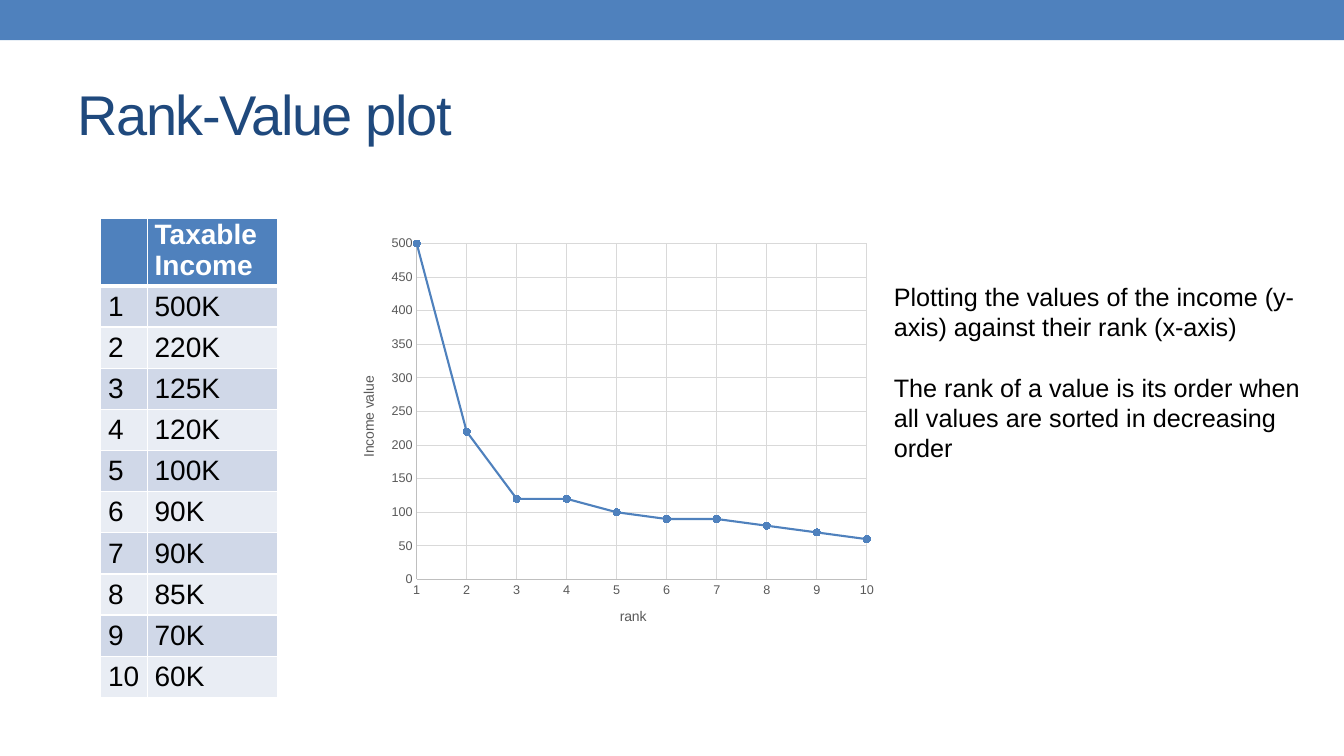
"""Build the rank-value plot slide: income table, scatter chart and explanation."""
import pptx
import pptx.chart.data
import pptx.dml.color
import pptx.enum.chart
import pptx.enum.shapes
import pptx.enum.text
import pptx.oxml
import pptx.oxml.ns
import pptx.util
from lxml import etree

Pt = pptx.util.Pt
qn = pptx.oxml.ns.qn
COLORS = {
    "accent": "4F81BD", "title": "1F497D", "text": "000000", "white": "FFFFFF",
    "band_dark": "D0D8E8", "band_light": "E9EDF4",
    "label": "595959", "axis": "BFBFBF", "grid": "D9D9D9",
}
INCOMES = [500, 220, 125, 120, 100, 90, 90, 85, 70, 60]


def style_font(font, size, color, bold=False):
    font.name = "Arial"
    font.size = Pt(size)
    font.bold = bold
    font.color.rgb = pptx.dml.color.RGBColor.from_string(COLORS[color])


def place(element, index, **settings):
    for old in element.findall(qn("c:layout")):
        element.remove(old)
    layout = etree.Element(qn("c:layout"))
    manual = etree.SubElement(layout, qn("c:manualLayout"))
    for tag, value in settings.items():
        etree.SubElement(manual, qn(f"c:{tag}")).set("val", str(value))
    element.insert(index, layout)


presentation = pptx.Presentation()
presentation.slide_width, presentation.slide_height = Pt(960), Pt(540)
slide = presentation.slides.add_slide(presentation.slide_layouts[5])
rgb = {name: pptx.dml.color.RGBColor.from_string(value) for name, value in COLORS.items()}

top_band = slide.shapes.add_shape(
    pptx.enum.shapes.MSO_SHAPE.RECTANGLE, 0, 0, Pt(960), Pt(28.8))
top_band.shadow.inherit = False
top_band.fill.solid()
top_band.fill.fore_color.rgb = rgb["accent"]
top_band.line.fill.background()

heading = slide.shapes.title
heading.left, heading.top, heading.width, heading.height = Pt(48), Pt(42), Pt(864), Pt(78)
heading.text_frame.text = "Rank-Value plot"
heading.text_frame.vertical_anchor = pptx.enum.text.MSO_ANCHOR.MIDDLE
heading_line = heading.text_frame.paragraphs[0]
heading_line.alignment = pptx.enum.text.PP_ALIGN.LEFT
style_font(heading_line.runs[0].font, 40, "title")
heading_line.runs[0].font._element.set("spc", "-100")

income_table = slide.shapes.add_table(
    len(INCOMES) + 1, 2, Pt(72), Pt(156.2), Pt(126), Pt(342)).table
income_table.columns[0].width, income_table.columns[1].width = Pt(33.3), Pt(92.7)
table_rows = [("", "Taxable\nIncome")]
table_rows += [(str(rank), f"{income}K") for rank, income in enumerate(INCOMES, 1)]
for row, texts in enumerate(table_rows):
    is_header = row == 0
    income_table.rows[row].height = Pt(48 if is_header else 29.4)
    band = "accent" if is_header else "band_dark" if row % 2 else "band_light"
    borders = {"L": 1, "R": 1, "T": 3 if row == 1 else 1, "B": 3 if is_header else 1}
    for column, text in enumerate(texts):
        cell = income_table.cell(row, column)
        cell.text_frame.text = text
        cell.margin_left = cell.margin_right = Pt(5.2)
        cell.margin_top = cell.margin_bottom = 0
        if not is_header:
            cell.vertical_anchor = pptx.enum.text.MSO_ANCHOR.MIDDLE
        for paragraph in cell.text_frame.paragraphs:
            for run in paragraph.runs:
                style_font(run.font, 20, "white" if is_header else "text", is_header)
        properties = cell._tc.get_or_add_tcPr()
        for side, width in borders.items():
            border = etree.SubElement(properties, qn(f"a:ln{side}"), w=str(Pt(width)))
            paint = etree.SubElement(border, qn("a:solidFill"))
            etree.SubElement(paint, qn("a:srgbClr"), val=COLORS["white"])
        cell.fill.solid()
        cell.fill.fore_color.rgb = rgb[band]

rank_data = pptx.chart.data.XyChartData()
income_points = rank_data.add_series("Series 1")
for rank, income in enumerate(INCOMES, 1):
    income_points.add_data_point(rank, round(income, -1))
rank_plot = slide.shapes.add_chart(
    pptx.enum.chart.XL_CHART_TYPE.XY_SCATTER_LINES,
    Pt(243.4), Pt(162), Pt(387.4), Pt(300), rank_data).chart
rank_plot.has_title = False
rank_plot.has_legend = False
style_font(rank_plot.font, 10, "text")
place(rank_plot._chartSpace.chart.plotArea, 0, layoutTarget="inner",
      xMode="edge", yMode="edge", x=0.14, y=0.04, w=0.83, h=0.8)

axes = [
    (rank_plot.category_axis, "rank", 1, 10, 1, 0.51, 0.9),
    (rank_plot.value_axis, "Income value", 0, 500, 50, 0.03, 0.35),
]
for axis, caption, low, high, step, x, y in axes:
    axis.minimum_scale, axis.maximum_scale, axis.major_unit = low, high, step
    axis.major_tick_mark = axis.minor_tick_mark = pptx.enum.chart.XL_TICK_MARK.NONE
    axis.has_major_gridlines = True
    for line, color in ((axis.format.line, "axis"), (axis.major_gridlines.format.line, "grid")):
        line.color.rgb = rgb[color]
        line.width = Pt(0.75)
    style_font(axis.tick_labels.font, 9, "label")
    axis.tick_labels.number_format = "General"
    axis.tick_labels.number_format_is_linked = False
    axis.axis_title.text_frame.text = caption
    style_font(axis.axis_title.text_frame.paragraphs[0].runs[0].font, 10, "label")
    place(axis.axis_title._element, 1, xMode="edge", yMode="edge", x=x, y=y)

income_series = rank_plot.plots[0].series[0]
rank_plot.plots[0].vary_by_categories = False
income_series.smooth = False
income_series.format.line.color.rgb = rgb["accent"]
income_series.format.line.width = Pt(1.5)
income_series.marker.style = pptx.enum.chart.XL_MARKER_STYLE.CIRCLE
income_series.marker.size = 5
income_series.marker.format.fill.solid()
income_series.marker.format.fill.fore_color.rgb = rgb["accent"]
income_series.marker.format.line.color.rgb = rgb["accent"]

explanation = slide.shapes.add_textbox(Pt(631.4), Pt(197.3), Pt(316), Pt(138.2)).text_frame
explanation.word_wrap = True
explanation.text = (
    "Plotting the values of the income (y-axis) against their rank (x-axis)\n"
    "The rank of a value is its order when all values are sorted in decreasing order")
for paragraph in explanation.paragraphs:
    style_font(paragraph.runs[0].font, 18, "text")
explanation.paragraphs[1].space_before = Pt(21.6)

presentation.save("out.pptx")
